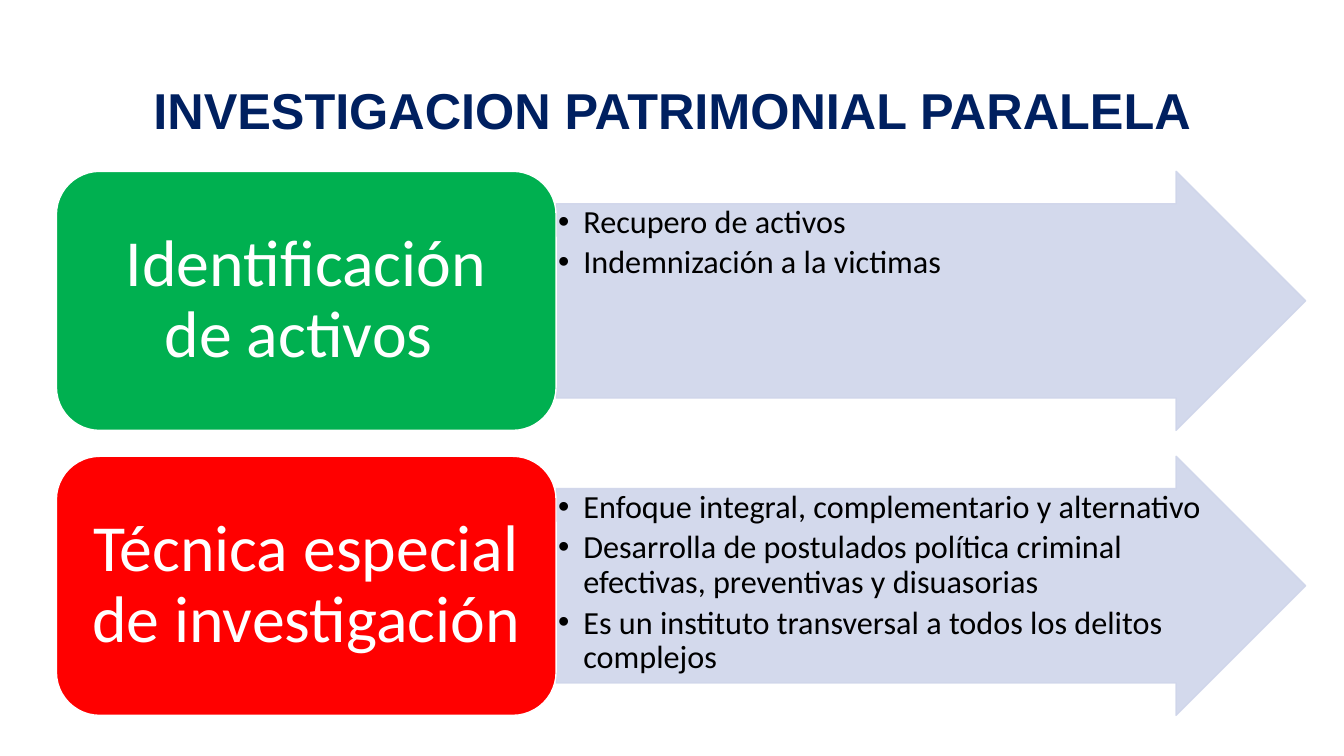
from dataclasses import dataclass
from lxml import etree
from pptx import Presentation
from pptx.dml.color import RGBColor
from pptx.enum.shapes import MSO_SHAPE
from pptx.enum.text import MSO_ANCHOR, PP_ALIGN
from pptx.oxml.ns import qn
from pptx.util import Inches, Pt


@dataclass(frozen=True)
class Theme:
    title_color: str = "002060"
    arrow_color: str = "CFD5EA"
    white: str = "FFFFFF"
    black: str = "000000"
    green: str = "00B050"
    red: str = "FF0000"
    title_font: str = "Arial"
    body_font: str = "Calibri"
    title_size: int = 36
    card_size: int = 47
    bullet_size: int = 23
    arrow_opacity: int = 90


THEME = Theme()

# Grid: a card column takes 40% of the width, an arrow column 60%
SLIDE_WIDTH, SLIDE_HEIGHT = 13.33, 7.5
GRID_LEFT, GRID_TOP, GRID_WIDTH = 0.56, 1.7, 12.39
CARD_WIDTH = GRID_WIDTH * 0.4
ARROW_WIDTH = GRID_WIDTH * 0.6
ROW_HEIGHT = 2.57
ROW_PITCH = ROW_HEIGHT * 1.1

ROWS = [
    ("Identificación de activos ", THEME.green,
     ["Recupero de activos", "Indemnización a la victimas"]),
    ("Técnica especial de investigación ", THEME.red,
     ["Enfoque integral, complementario y alternativo",
      "Desarrolla de postulados política criminal efectivas, preventivas y disuasorias",
      "Es un instituto transversal a todos los delitos complejos"]),
]


def set_opacity(fill, percent):
    color = fill.fore_color._xFill.find(qn("a:srgbClr"))
    etree.SubElement(color, qn("a:alpha"), val=str(percent * 1000))


def add_block(slide, kind, left, top, width, fill_color, line_color, opacity=100):
    shape = slide.shapes.add_shape(
        kind, Inches(left), Inches(top), Inches(width), Inches(ROW_HEIGHT))
    shape.shadow.inherit = False
    shape.line.width = Pt(1)
    for fill, color in ((shape.fill, fill_color), (shape.line.fill, line_color)):
        fill.solid()
        fill.fore_color.rgb = RGBColor.from_string(color)
        if opacity < 100:
            set_opacity(fill, opacity)
    return shape


def set_frame(text_frame, anchor, side, end):
    text_frame.word_wrap = True
    text_frame.vertical_anchor = anchor
    text_frame.margin_left = text_frame.margin_right = Inches(side)
    text_frame.margin_top = text_frame.margin_bottom = Inches(end)


def style_paragraph(paragraph, font_name, size, color, align, bold=False):
    paragraph.alignment = align
    paragraph.line_spacing = 0.9
    for run in paragraph.runs:
        run.font.name = font_name
        run.font.size = Pt(size)
        run.font.bold = bold
        run.font.color.rgb = RGBColor.from_string(color)


def add_bullet(paragraph):
    properties = paragraph._p.get_or_add_pPr()
    properties.set("marL", str(Inches(0.25)))
    properties.set("indent", str(-Inches(0.25)))
    etree.SubElement(properties, qn("a:buFont"), typeface="Arial")
    etree.SubElement(properties, qn("a:buChar"), char="•")


def add_title(slide, text):
    box = slide.shapes.add_textbox(
        Inches(0.92), Inches(0.4), Inches(11.5), Inches(1.45))
    set_frame(box.text_frame, MSO_ANCHOR.MIDDLE, 0.1, 0.05)
    box.text_frame.text = text
    style_paragraph(box.text_frame.paragraphs[0], THEME.title_font,
                    THEME.title_size, THEME.title_color, PP_ALIGN.CENTER, bold=True)


def add_arrow(slide, top, items):
    arrow = add_block(slide, MSO_SHAPE.RIGHT_ARROW, GRID_LEFT + CARD_WIDTH, top,
                      ARROW_WIDTH, THEME.arrow_color, THEME.arrow_color,
                      THEME.arrow_opacity)
    arrow.adjustments[0] = 0.75
    arrow.adjustments[1] = 0.5
    set_frame(arrow.text_frame, MSO_ANCHOR.TOP, 0.02, 0.02)
    arrow.text_frame.text = "\n".join(items)
    for paragraph in arrow.text_frame.paragraphs:
        add_bullet(paragraph)
        style_paragraph(paragraph, THEME.body_font, THEME.bullet_size,
                        THEME.black, PP_ALIGN.LEFT)
        paragraph.space_after = Pt(4)


def add_card(slide, top, text, color):
    card = add_block(slide, MSO_SHAPE.ROUNDED_RECTANGLE, GRID_LEFT, top,
                     CARD_WIDTH, color, THEME.white)
    set_frame(card.text_frame, MSO_ANCHOR.MIDDLE, 0.2, 0.1)
    card.text_frame.text = text
    style_paragraph(card.text_frame.paragraphs[0], THEME.body_font,
                    THEME.card_size, THEME.white, PP_ALIGN.CENTER)


def main():
    presentation = Presentation()
    presentation.slide_width = Inches(SLIDE_WIDTH)
    presentation.slide_height = Inches(SLIDE_HEIGHT)
    slide = presentation.slides.add_slide(presentation.slide_layouts[6])

    # Heading
    add_title(slide, "INVESTIGACION PATRIMONIAL PARALELA")

    # One arrow and one card per row
    for index, (label, color, items) in enumerate(ROWS):
        top = GRID_TOP + index * ROW_PITCH
        add_arrow(slide, top, items)
        add_card(slide, top, label, color)

    presentation.save("out.pptx")


if __name__ == "__main__":
    main()
